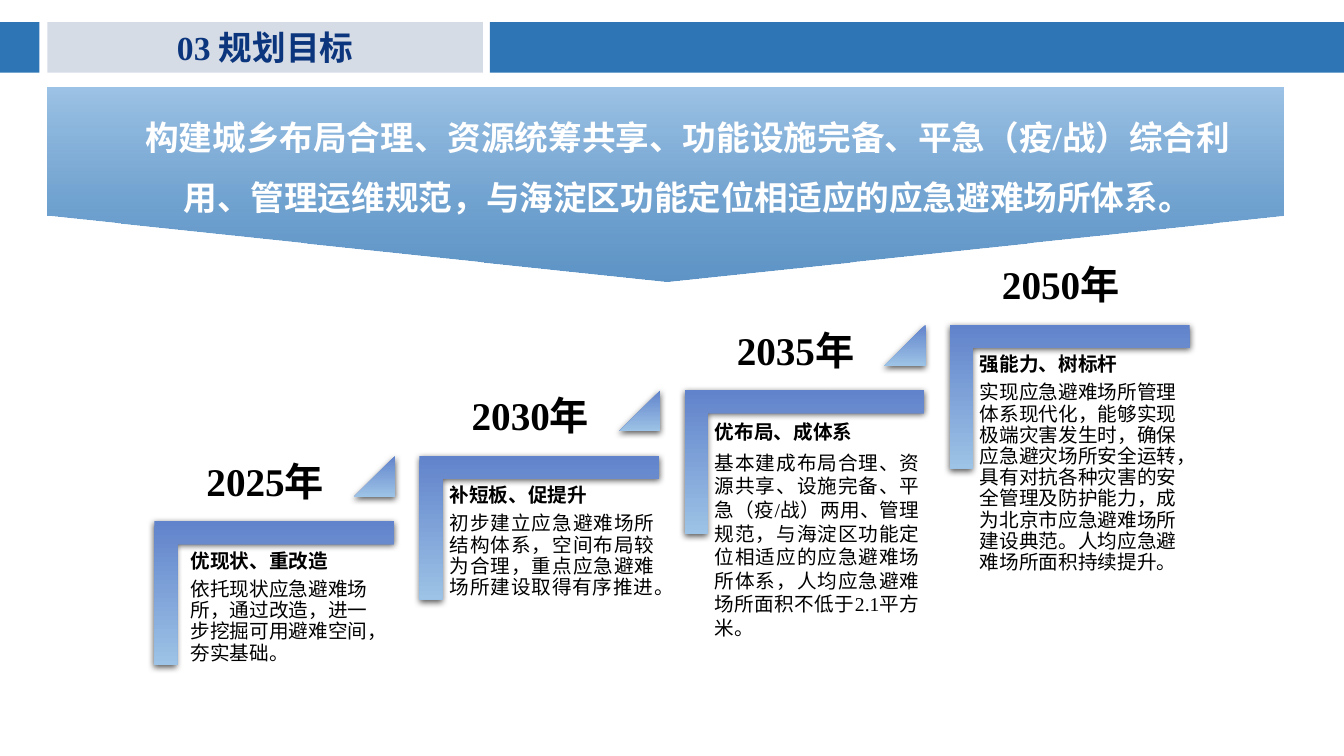
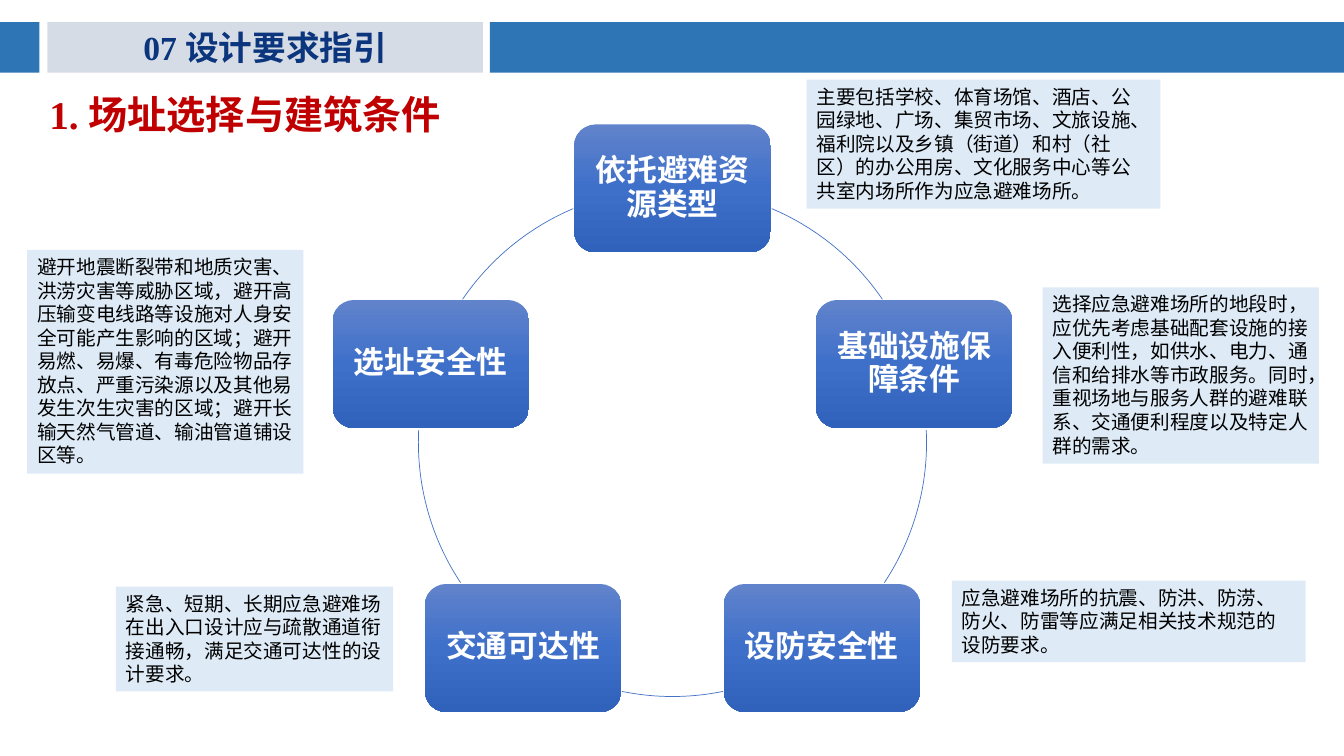
from math import cos, radians, sin

from lxml import etree
from pptx import Presentation
from pptx.dml.color import RGBColor
from pptx.enum.shapes import MSO_SHAPE
from pptx.enum.text import MSO_ANCHOR, MSO_AUTO_SIZE, PP_ALIGN
from pptx.oxml.ns import qn
from pptx.util import Pt

RECT = MSO_SHAPE.RECTANGLE
ROUND = MSO_SHAPE.ROUNDED_RECTANGLE
CORNER = MSO_SHAPE.CORNER
WEDGE = MSO_SHAPE.ISOSCELES_TRIANGLE
ARROW = MSO_SHAPE.PENTAGON
ARC = MSO_SHAPE.ARC
TOP, MID = MSO_ANCHOR.TOP, MSO_ANCHOR.MIDDLE
LEFT, CENTER, JUST = PP_ALIGN.LEFT, PP_ALIGN.CENTER, PP_ALIGN.JUSTIFY

SCALE = 9144
FONT = "Times New Roman"
COLORS = {
    "panel": "D6DCE5", "band": "2E75B6", "title": "0B357C",
    "text": "000000", "white": "FFFFFF", "head": "C00000",
    "note": "DEEBF7", "arc": "4472C4",
    "top": "6183CB", "mid": "3E70CA", "low": "3062BB", "pale": "9DC3E6",
}
STEP_FADE = [(0, "top", 100), (100, "pale", 100)]
NODE_FADE = [(0, "top", 100), (50, "mid", 100), (100, "low", 100)]
GOAL_FADE = [(0, "band", 77), (100, "pale", 100)]

GOAL = ("构建城乡布局合理、资源统筹共享、功能设施完备、平急（疫/战）综合利用、"
        "管理运维规范，与海淀区功能定位相适应的应急避难场所体系。")
STEPS = [
    ("2025年", "优现状、重改造",
     "依托现状应急避难场所，通过改造，进一步挖掘可用避难空间，夯实基础。",
     30, 202, LEFT, 0.9),
    ("2030年", "补短板、促提升",
     "初步建立应急避难场所结构体系，空间布局较为合理，重点应急避难场所建设取得有序推进。",
     24, 215, JUST, 0.9),
    ("2035年", "优布局、成体系",
     "基本建成布局合理、资源共享、设施完备、平急（疫/战）两用、管理规范，"
     "与海淀区功能定位相适应的应急避难场所体系，人均应急避难场所面积不低于2.1平方米。",
     24, 215, JUST, 1.0),
    ("2050年", "强能力、树标杆",
     "实现应急避难场所管理体系现代化，能够实现极端灾害发生时，确保应急避灾场所安全运转，"
     "具有对抗各种灾害的安全管理及防护能力，成为北京市应急避难场所建设典范。"
     "人均应急避难场所面积持续提升。",
     24, 215, LEFT, 0.9),
]
NODES = ["依托避难资源类型", "基础设施保障条件", "设防安全性", "交通可达性", "选址安全性"]
ARCS = [(293, 325.7), (357.2, 33.5), (78.5, 101.5), (146.5, 182.8), (214.3, 247)]
NOTES = [
    ((800, 79, 351, 128),
     "主要包括学校、体育场馆、酒店、公园绿地、广场、集贸市场、文旅设施、福利院以及乡镇（街道）"
     "和村（社区）的办公用房、文化服务中心等公共室内场所作为应急避难场所。"),
    ((1034, 285, 274, 175),
     "选择应急避难场所的地段时，应优先考虑基础配套设施的接入便利性，如供水、电力、通信和给排水等市政服务。"
     "同时，重视场地与服务人群的避难联系、交通便利程度以及特定人群的需求。"),
    ((944, 576, 351, 81),
     "应急避难场所的抗震、防洪、防涝、防火、防雷等应满足相关技术规范的设防要求。"),
    ((27, 248, 274, 222),
     "避开地震断裂带和地质灾害、洪涝灾害等威胁区域，避开高压输变电线路等设施对人身安全可能产生影响的区域；"
     "避开易燃、易爆、有毒危险物品存放点、严重污染源以及其他易发生次生灾害的区域；"
     "避开长输天然气管道、输油管道铺设区等。"),
    ((115, 582, 275, 104),
     "紧急、短期、长期应急避难场在出入口设计应与疏散通道衔接通畅，满足交通可达性的设计要求。"),
]


def px(n):
    return round(n * SCALE)


def rgb(name):
    return RGBColor.from_string(COLORS[name])


def paint(shape, name):
    shape.fill.solid()
    shape.fill.fore_color.rgb = rgb(name)


def fade(shape, stops, angle=90):
    shape.fill.gradient()
    grad = shape._element.spPr.find(qn("a:gradFill"))
    grad.find(qn("a:lin")).set("ang", str(angle * 60000))
    group = grad.find(qn("a:gsLst"))
    for old in list(group):
        group.remove(old)
    for place, name, alpha in stops:
        stop = etree.SubElement(group, qn("a:gs"), pos=str(place * 1000))
        color = etree.SubElement(stop, qn("a:srgbClr"), val=COLORS[name])
        if alpha < 100:
            etree.SubElement(color, qn("a:alpha"), val=str(alpha * 1000))


def shade(shape):
    group = shape._element.spPr.find(qn("a:effectLst"))
    outer = etree.SubElement(
        group, qn("a:outerShdw"), blurRad=str(Pt(4.5)), dist=str(Pt(1.5)),
        dir="5400000", algn="ctr", rotWithShape="0")
    color = etree.SubElement(outer, qn("a:srgbClr"), val=COLORS["text"])
    etree.SubElement(color, qn("a:alpha"), val="63000")


def add(slide, kind, box, fill=None):
    shape = slide.shapes.add_shape(kind, *map(px, box))
    shape.shadow.inherit = False
    shape.line.fill.background()
    if fill:
        paint(shape, fill)
    return shape


def turn(slide, kind, box, stops, angle):
    x, y, w, h = box
    shift = (w - h) / 2
    shape = add(slide, kind, (x + shift, y - shift, h, w))
    shape.rotation = 90
    fade(shape, stops, angle)
    return shape


def write(shape, lines, size, color="text", bold=False, align=LEFT,
          anchor=TOP, space=1.0, after=0, pad=(10, 5)):
    frame = shape.text_frame
    frame.word_wrap = True
    frame.auto_size = MSO_AUTO_SIZE.NONE
    frame.vertical_anchor = anchor
    frame.margin_left = frame.margin_right = px(pad[0])
    frame.margin_top = frame.margin_bottom = px(pad[1])
    frame.text = "\n".join(lines)
    for para in frame.paragraphs:
        para.alignment = align
        para.line_spacing = space
        para.space_before = Pt(0)
        para.space_after = Pt(after)
        para.font.name = FONT
        para.font.size = Pt(size)
        para.font.bold = bold
        para.font.color.rgb = rgb(color)
    return frame.paragraphs


def label(slide, box, lines, size, **style):
    shape = slide.shapes.add_textbox(*map(px, box))
    return write(shape, lines, size, **style)


def start(deck, text):
    slide = deck.slides.add_slide(deck.slide_layouts[5])
    title = slide.shapes.title
    title.left, title.top, title.width, title.height = map(px, (47, 22, 432, 50))
    paint(title, "panel")
    write(title, [text], 24, color="title", bold=True, align=CENTER, anchor=MID)
    for x, w in ((0, 39), (486, 847)):
        add(slide, RECT, (x, 22, w, 50), "band")
    return slide


def step(slide, i, year, head, body, dx, width, align, space):
    x, y = 153 + 263 * i, 517 - 65 * i
    bar = turn(slide, CORNER, (x, y, 238, 143), STEP_FADE, 0)
    bar.adjustments[0] = bar.adjustments[1] = 0.16
    shade(bar)
    paras = label(slide, (x + dx, y + 24, width, 188), [head, body], 14,
                  align=align, space=space, after=5, pad=(6, 6))
    paras[0].font.bold = True
    label(slide, (x + 31, y - 73, 158, 66), [year], 28,
          bold=True, align=CENTER, anchor=MID)
    if i < len(STEPS) - 1:
        wedge = add(slide, WEDGE, (x + 198, y - 65, 41, 41))
        wedge.adjustments[0] = 1
        fade(wedge, STEP_FADE)
        shade(wedge)


def goals(deck):
    slide = start(deck, "03 规划目标")
    for i, item in enumerate(STEPS):
        step(slide, i, *item)
    banner = turn(slide, ARROW, (47, 87, 1226, 192), GOAL_FADE, 180)
    banner.adjustments[0] = 0.34
    label(slide, (118, 91, 1128, 124), [GOAL], 24, color="white",
          bold=True, align=CENTER, space=1.5)


def ring(slide, cx, cy, r):
    for first, last in ARCS:
        arc = add(slide, ARC, (cx - r, cy - r, 2 * r, 2 * r))
        arc.adjustments[0], arc.adjustments[1] = first * 0.6, last * 0.6
        arc.fill.background()
        arc.line.color.rgb = rgb("arc")
        arc.line.width = Pt(0.5)
    w, h = 195, 127
    for i, text in enumerate(NODES):
        angle = radians(360 / len(NODES) * i - 90)
        x, y = cx + r * cos(angle), cy + r * sin(angle)
        node = add(slide, ROUND, (x - w / 2, y - h / 2, w, h))
        fade(node, NODE_FADE)
        write(node, [text], 22, color="white", bold=True, align=CENTER,
              anchor=MID, space=0.9, pad=(15, 15))


def design(deck):
    slide = start(deck, "07 设计要求指引")
    para = label(slide, (39, 92, 995, 49), ["1. 场址选择与建筑条件"], 28,
                 color="head", bold=True, align=JUST, space=Pt(28), after=6)[0]
    para.space_before = Pt(6)
    ring(slide, 667, 439, 252)
    for box, text in NOTES:
        write(add(slide, RECT, box, "note"), [text], 14)


def main():
    deck = Presentation()
    deck.slide_width, deck.slide_height = px(1333), px(750)
    goals(deck)
    design(deck)
    deck.save("out.pptx")


if __name__ == "__main__":
    main()
